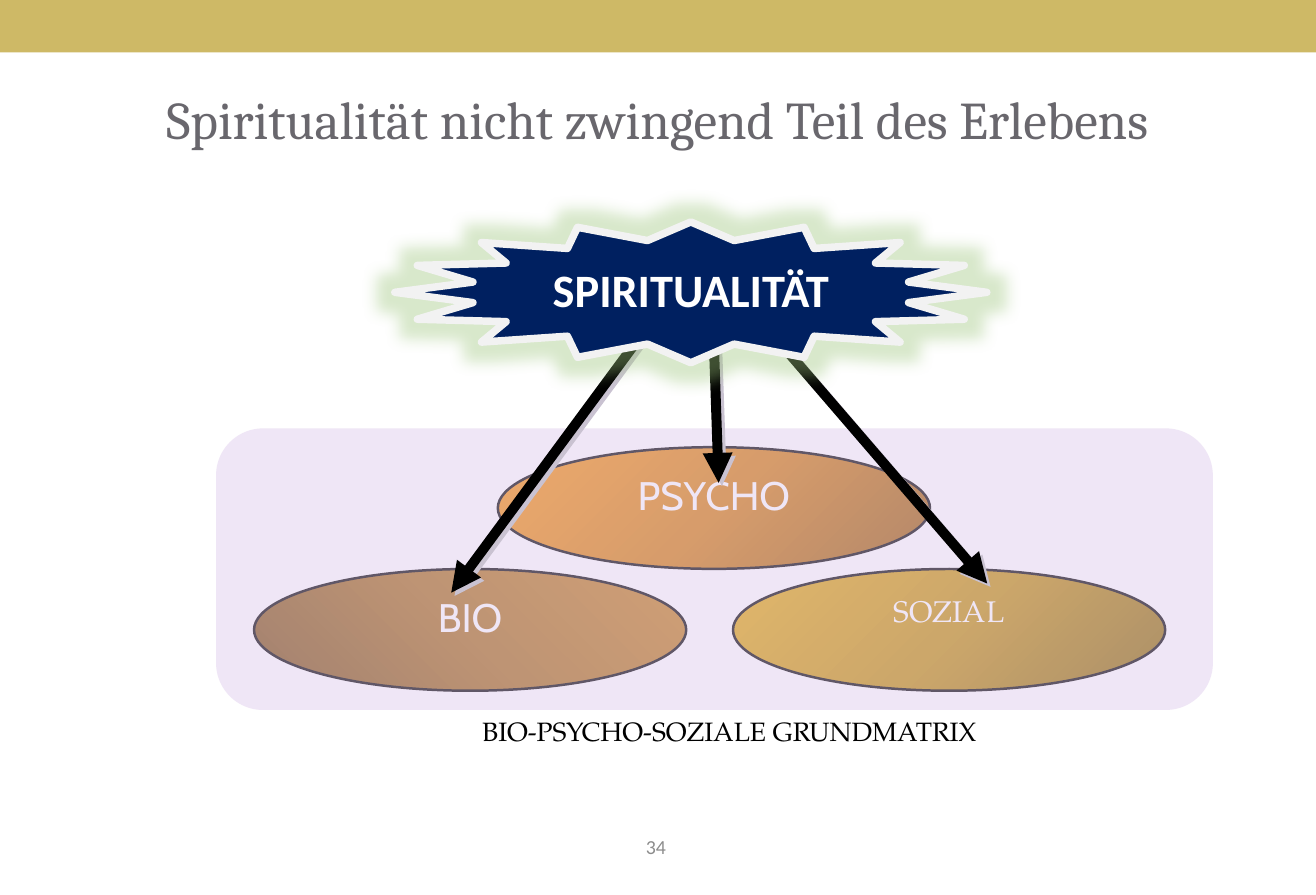
from pptx import Presentation
from pptx.dml.color import RGBColor
from pptx.enum.shapes import MSO_CONNECTOR, MSO_SHAPE
from pptx.enum.text import MSO_ANCHOR, PP_ALIGN
from pptx.oxml import parse_xml
from pptx.oxml.ns import nsdecls, qn
from pptx.util import Pt

RECT, ROUNDED, ELLIPSE, STAR = (MSO_SHAPE.RECTANGLE, MSO_SHAPE.ROUNDED_RECTANGLE,
                                MSO_SHAPE.OVAL, MSO_SHAPE.STAR_16_POINT)
STRAIGHT = MSO_CONNECTOR.STRAIGHT
CENTER = PP_ALIGN.CENTER
TOP, MIDDLE = MSO_ANCHOR.TOP, MSO_ANCHOR.MIDDLE

WHITE = RGBColor(0xFF, 0xFF, 0xFF)
BLACK = RGBColor(0x00, 0x00, 0x00)
GOLD = RGBColor(0xCE, 0xB9, 0x66)
TITLE_GRAY = RGBColor(0x69, 0x67, 0x6D)
NUMBER_GRAY = RGBColor(0x8C, 0x8C, 0x8C)
LILAC = RGBColor(0xDC, 0xC7, 0xEB)
NAVY = RGBColor(0x00, 0x20, 0x60)
STAR_EDGE = RGBColor(0xF2, 0xF2, 0xF2)
GLOW_GREEN = RGBColor(0x9E, 0xC6, 0x7D)
SHADOW = RGBColor(0xC9, 0xC2, 0xD1)

SLIDE_W, SLIDE_H = 793.7, 540
ELLIPSE_W, ELLIPSE_H = 260.64, 73.44
TITLE = "Spiritualität nicht zwingend Teil des Erlebens"
CAPTION = "BIO-PSYCHO-SOZIALE GRUNDMATRIX"
PAGE = "34"
DIMENSIONS = [
    ("BIO", 153.2, 343.3, "Cabin", 24, 315, ("764C10", "A86D17", "C7811B")),
    ("SOZIAL", 442.08, 343.3, "TeX Gyre Pagella", 18, 225, ("876503", "C18F05", "E5AA05")),
    ("PSYCHO", 300.24, 269.8, "Cabin", 24, 225, ("955705", "D47C07", "FC9308")),
]
ARROWS = [
    (470.88, 207.36, 595.44, 352.08),
    (390.96, 196.56, 272.16, 357.6),
    (430.56, 207.36, 433.44, 291.3),
]


def write(s, text, font, size, color, anchor=TOP, bold=False):
    tf = s.text_frame
    tf.word_wrap = True
    tf.vertical_anchor = anchor
    p = tf.paragraphs[0]
    p.text = text
    p.alignment = CENTER
    p.font.name = font
    p.font.size = Pt(size)
    p.font.bold = bold
    p.font.color.rgb = color


def add_shape(slide, kind, box, fill=None, edge=None, width=0):
    s = slide.shapes.add_shape(kind, *map(Pt, box))
    s.shadow.inherit = False
    if fill is None:
        s.fill.background()
    else:
        s.fill.solid()
        s.fill.fore_color.rgb = fill
    if edge is None:
        s.line.fill.background()
    else:
        s.line.color.rgb = edge
        s.line.width = Pt(width)
    return s


def add_text(slide, box, *args):
    write(slide.shapes.add_textbox(*map(Pt, box)), *args)


def set_gradient(s, angle, colors):
    stops = "".join(f'<a:gs pos="{i * 50000}"><a:srgbClr val="{c}"/></a:gs>'
                    for i, c in enumerate(colors))
    gradient = parse_xml(f'<a:gradFill {nsdecls("a")} rotWithShape="1"><a:gsLst>{stops}</a:gsLst>'
                         f'<a:lin ang="{angle * 60000}" scaled="1"/></a:gradFill>')
    spPr = s._element.spPr
    spPr.replace(spPr.find(qn("a:noFill")), gradient)


def set_effect(s, effect):
    spPr = s._element.spPr
    old = spPr.find(qn("a:effectLst"))
    if old is not None:
        spPr.remove(old)
    spPr.append(parse_xml(f'<a:effectLst {nsdecls("a")}>{effect}</a:effectLst>'))


def add_arrow(slide, ends):
    s = slide.shapes.add_connector(STRAIGHT, *map(Pt, ends))
    s.line.color.rgb = BLACK
    s.line.width = Pt(6)
    s._element.spPr.find(qn("a:ln")).append(
        parse_xml(f'<a:tailEnd {nsdecls("a")} type="triangle"/>'))
    set_effect(s, f'<a:outerShdw blurRad="0" dist="{Pt(2.8)}" dir="2700000" algn="ctr" '
                  f'rotWithShape="0"><a:srgbClr val="{SHADOW}"/></a:outerShdw>')


def main():
    prs = Presentation()
    prs.slide_width = Pt(SLIDE_W)
    prs.slide_height = Pt(SLIDE_H)
    slide = prs.slides.add_slide(prs.slide_layouts[5])

    add_shape(slide, RECT, (0, 0, SLIDE_W, 31.68), GOLD)
    add_text(slide, (303.12, 496.5, 185.04, 28.8), PAGE, "Calibri", 12, NUMBER_GRAY, MIDDLE)

    title = slide.shapes.title
    title.left, title.top, title.width, title.height = map(Pt, (39.6, 25.92, 714.24, 90.72))
    write(title, TITLE, "Cambria", 32, TITLE_GRAY, MIDDLE)

    for name, left, top, font, size, angle, colors in DIMENSIONS:
        s = add_shape(slide, ELLIPSE, (left, top, ELLIPSE_W, ELLIPSE_H), None, BLACK, 1.5)
        set_gradient(s, angle, colors)
        write(s, name, font, size, WHITE)

    matrix = add_shape(slide, ROUNDED, (130.32, 258.48, 601.2, 169.92), LILAC)
    matrix._element.spPr.find(qn("a:solidFill"))[0].append(
        parse_xml(f'<a:alpha {nsdecls("a")} val="44000"/>'))

    for ends in ARROWS:
        add_arrow(slide, ends)

    star = add_shape(slide, STAR, (238.1, 133.92, 357.12, 84.96), NAVY, STAR_EDGE, 4.5)
    set_effect(star, f'<a:glow rad="{Pt(18)}"><a:srgbClr val="{GLOW_GREEN}">'
                     '<a:alpha val="40000"/></a:srgbClr></a:glow>')
    write(star, "SPIRITUALITÄT", "Calibri", 28, WHITE, TOP, True)

    add_text(slide, (226.8, 428.1, 426.24, 26.64), CAPTION, "TeX Gyre Pagella", 16, BLACK)

    prs.save("out.pptx")


if __name__ == "__main__":
    main()
